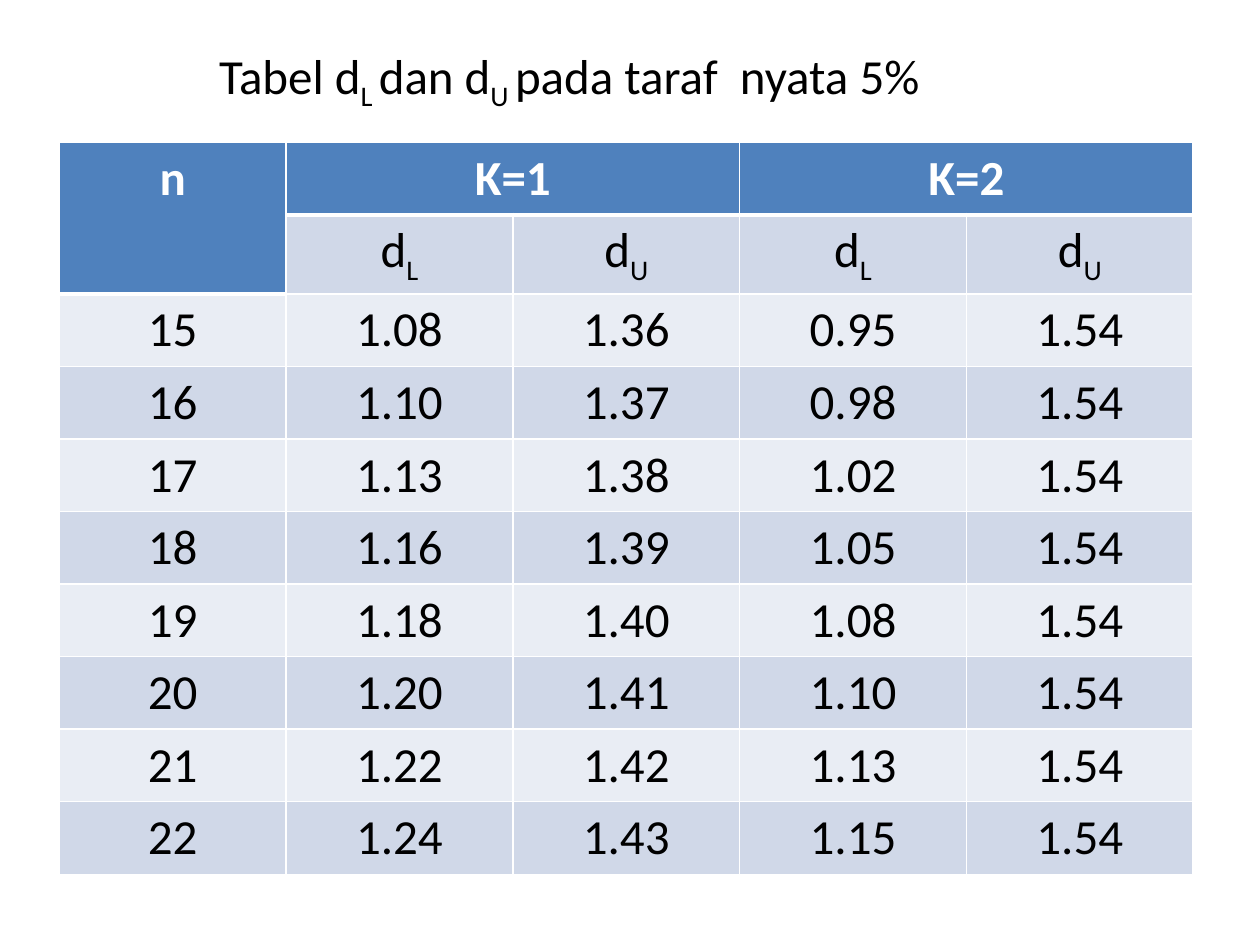
from lxml.etree import SubElement
from pptx import Presentation
from pptx.dml.color import RGBColor
from pptx.enum.text import MSO_AUTO_SIZE, PP_ALIGN as Align
from pptx.oxml.ns import qn
from pptx.util import Inches, Pt

BLACK = RGBColor(0x00, 0x00, 0x00)
WHITE = RGBColor(0xFF, 0xFF, 0xFF)
HEADER_BLUE = RGBColor(0x4F, 0x81, 0xBD)
BAND_DARK = RGBColor(0xD0, 0xD8, 0xE8)
BAND_LIGHT = RGBColor(0xE9, 0xED, 0xF4)

COLUMN_WIDTH = 1.8
ROW_HEIGHT = 0.57
LOWER = ("d", "L")
UPPER = ("d", "U")
TITLE = ("Tabel d", "L ", "dan d", "U ", "pada taraf  nyata 5%")
ROWS = [
    (("n",), ("K=1",), (), ("K=2",), ()),
    ((), LOWER, UPPER, LOWER, UPPER),
    *[
        tuple((value,) for value in line.split())
        for line in (
            "15 1.08 1.36 0.95 1.54",
            "16 1.10 1.37 0.98 1.54",
            "17 1.13 1.38 1.02 1.54",
            "18 1.16 1.39 1.05 1.54",
            "19 1.18 1.40 1.08 1.54",
            "20 1.20 1.41 1.10 1.54",
            "21 1.22 1.42 1.13 1.54",
            "22 1.24 1.43 1.15 1.54",
        )
    ],
]


def write_text(frame, pieces, *, size=28, color=BLACK, bold=False, align=Align.LEFT):
    """Write pieces that alternate between normal text and subscript."""
    para = frame.paragraphs[0]
    para.alignment = align
    for index, piece in enumerate(pieces):
        span = para.add_run()
        span.text = piece
        font = span.font
        font.name = "Calibri"
        font.size = Pt(size)
        font.bold = bold
        font.color.rgb = color
        if index % 2:
            font._element.set("baseline", "-25000")


def set_borders(cell, **widths):
    properties = cell._tc.get_or_add_tcPr()
    for side in "LRTB":
        line = SubElement(properties, qn(f"a:ln{side}"), w=str(Pt(widths.get(side, 1))))
        fill = SubElement(line, qn("a:solidFill"))
        SubElement(fill, qn("a:srgbClr"), val=str(WHITE))


def style_cell(cell, pieces, row, column):
    is_header = row == 0 or (row == 1 and column == 0)
    heavy_top = row == 1 or (row == 2 and column == 0)
    heavy_bottom = is_header
    set_borders(cell, T=3 if heavy_top else 1, B=3 if heavy_bottom else 1)
    cell.fill.solid()
    band = BAND_DARK if row % 2 else BAND_LIGHT
    cell.fill.fore_color.rgb = HEADER_BLUE if is_header else band
    write_text(
        cell.text_frame,
        pieces,
        color=WHITE if is_header else BLACK,
        bold=is_header,
        align=Align.CENTER,
    )


def add_value_table(page, left, top):
    columns = len(ROWS[0])
    table = page.shapes.add_table(
        len(ROWS), columns, Inches(left), Inches(top),
        Inches(columns * COLUMN_WIDTH), Inches(len(ROWS) * ROW_HEIGHT),
    ).table
    for row, values in enumerate(ROWS):
        for column, pieces in enumerate(values):
            style_cell(table.cell(row, column), pieces, row, column)
    table.cell(0, 0).merge(table.cell(1, 0))
    for column in (1, 3):
        table.cell(0, column).merge(table.cell(0, column + 1))


def add_title(page, left, top, width, height):
    box = page.shapes.add_textbox(*map(Inches, (left, top, width, height)))
    frame = box.text_frame
    frame.word_wrap = True
    frame.auto_size = MSO_AUTO_SIZE.SHAPE_TO_FIT_TEXT
    write_text(frame, TITLE)


def main():
    deck = Presentation()
    deck.slide_width = Inches(10)
    deck.slide_height = Inches(7.5)
    page = deck.slides.add_slide(deck.slide_layouts[6])
    add_value_table(page, 0.47, 1.13)
    add_title(page, 1.64, 0.31, 6.56, 0.57)
    deck.save("out.pptx")


if __name__ == "__main__":
    main()
